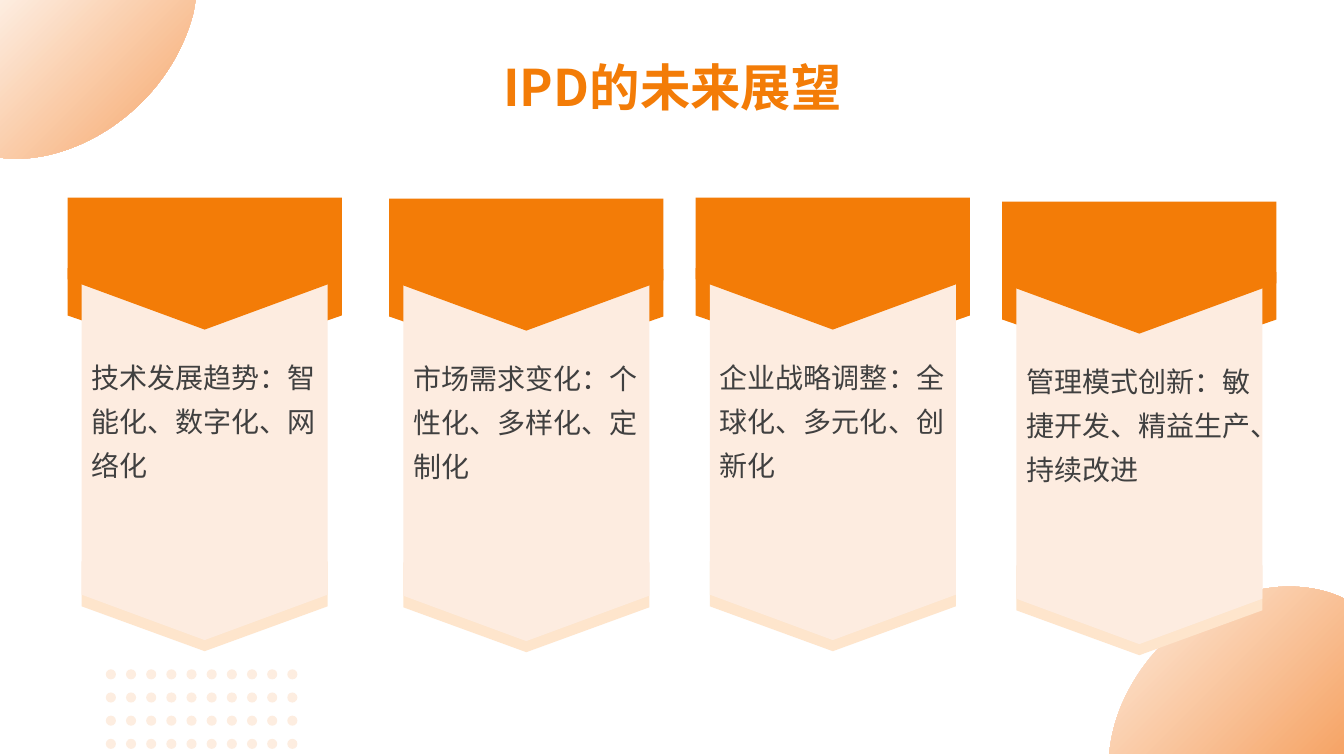
from lxml import etree
from pptx import Presentation
from pptx.dml.color import RGBColor
from pptx.enum.shapes import MSO_SHAPE
from pptx.enum.text import MSO_ANCHOR, MSO_AUTO_SIZE, PP_ALIGN
from pptx.oxml.ns import qn
from pptx.util import Inches, Pt

ELLIPSE, HOME_PLATE = MSO_SHAPE.OVAL, MSO_SHAPE.PENTAGON
MIDDLE, TOP = MSO_ANCHOR.MIDDLE, MSO_ANCHOR.TOP
CENTER, LEFT = PP_ALIGN.CENTER, PP_ALIGN.LEFT
NO_AUTOFIT = MSO_AUTO_SIZE.NONE

ORANGE = RGBColor(0xF3, 0x7C, 0x07)
LIGHT_ORANGE = RGBColor(0xF6, 0xA4, 0x66)
PEACH = RGBColor(0xFE, 0xE5, 0xCC)
CREAM = RGBColor(0xFD, 0xEC, 0xE0)
PALE = RGBColor(0xFD, 0xED, 0xE0)
GREY = RGBColor(0x40, 0x40, 0x40)

TITLE = "IPD的未来展望"
TITLE_STYLE = {
    "font": {"size": Pt(36), "bold": True},
    "paragraph": {"alignment": CENTER},
    "frame": {"vertical_anchor": MIDDLE},
}
BODY_STYLE = {
    "font": {"size": Pt(20), "bold": False},
    "paragraph": {"alignment": LEFT, "line_spacing": 1.3},
    "frame": {"vertical_anchor": TOP},
}

BANNERS = [
    (0.67, 1.96, "技术发展趋势：智能化、数字化、网络化"),
    (3.86, 1.97, "市场需求变化：个性化、多样化、定制化"),
    (6.90, 1.96, "企业战略调整：全球化、多元化、创新化"),
    (9.94, 2.00, "管理模式创新：敏捷开发、精益生产、持续改进"),
]
BANNER_WIDTH, PANEL_WIDTH = 2.72, 2.44
PANEL_INSET = (BANNER_WIDTH - PANEL_WIDTH) / 2

TOP_LEFT_CORNER = [
    [(0, 0)],
    [(1.94, 0)],
    [(1.92, 0.12), (1.84, 0.44), (1.66, 0.77), (1.38, 1.04)],
    [(1.38, 1.04), (0.98, 1.42), (0.48, 1.61), (0.04, 1.57)],
    [(0, 1.56)],
]
BOTTOM_RIGHT_CORNER = [
    [(12.78, 5.82), (12.96, 5.82), (13.13, 5.85), (13.29, 5.92)],
    [(13.33, 5.94)],
    [(13.33, 7.48)],
    [(11, 7.48)],
    [(11.01, 7.41), (11.06, 7.04), (11.25, 6.66), (11.57, 6.35)],
    [(11.57, 6.35), (11.93, 6.01), (12.38, 5.82), (12.78, 5.82)],
]


def apply(target, values):
    """Set every attribute named in a dict of format values."""
    for name, value in values.items():
        setattr(target, name, value)


def curve_points(controls, steps=24):
    """Return a single point as it is, or sample a cubic curve."""
    if len(controls) == 1:
        return controls
    weights = (1, 3, 3, 1)
    return [
        tuple(
            sum(
                weight * (1 - step / steps) ** (3 - power) * (step / steps) ** power * point[axis]
                for power, (weight, point) in enumerate(zip(weights, controls))
            )
            for axis in (0, 1)
        )
        for step in range(steps + 1)
    ]


class SlideBuilder:
    """Draw on one slide whose grid is 13.33 columns by 7.5 rows."""

    cell = Inches(1)
    font_name = "Noto Sans CJK SC"

    def __init__(self, presentation):
        """Size the presentation and add a title-only slide."""
        presentation.slide_width = self.length(13.33)
        presentation.slide_height = self.length(7.5)
        self.slide = presentation.slides.add_slide(presentation.slide_layouts[5])

    def length(self, cells):
        """Convert grid cells to a length."""
        return round(cells * self.cell)

    def box(self, column, row, width, height):
        """Convert a grid box to lengths."""
        return [self.length(cells) for cells in (column, row, width, height)]

    def paint(self, shape, color):
        """Give a shape a flat fill with no line or shadow."""
        shape.shadow.inherit = False
        shape.line.fill.background()
        shape.fill.solid()
        shape.fill.fore_color.rgb = color

    def dot(self, column, row, size, color):
        """Add a round dot."""
        self.paint(self.slide.shapes.add_shape(ELLIPSE, *self.box(column, row, size, size)), color)

    def plate(self, column, row, width, height, color):
        """Add a home plate that points down inside a grid box."""
        shift = (width - height) / 2
        box = self.box(column + shift, row - shift, height, width)
        shape = self.slide.shapes.add_shape(HOME_PLATE, *box)
        shape.rotation = 90
        self.paint(shape, color)

    def outline(self, points, color):
        """Add a closed freeform through grid points."""
        start, *others = [tuple(self.length(value) for value in point) for point in points]
        builder = self.slide.shapes.build_freeform(*start)
        builder.add_line_segments(others, close=True)
        shape = builder.convert_to_shape()
        self.paint(shape, color)
        return shape

    def pennant(self, column, row, width, shoulder, height, color):
        """Add a band with a pointed lower edge."""
        right, side = column + width, row + shoulder
        tip = (column + width / 2, row + height)
        self.outline([(column, row), (right, row), (right, side), tip, (column, side)], color)

    def corner(self, segments):
        """Add a curved corner with a diagonal gradient."""
        shape = self.outline([point for segment in segments for point in curve_points(segment)], PALE)
        shape.fill.gradient()
        shape.fill.gradient_angle = 315
        for stop, position, color in zip(shape.fill.gradient_stops, (0, 1), (PALE, LIGHT_ORANGE)):
            stop.position = position
            stop.color.rgb = color

    def fill_text(self, shape, text, style, color):
        """Fill a shape with one styled paragraph."""
        frame = shape.text_frame
        apply(frame, {"word_wrap": True, "auto_size": NO_AUTOFIT, **style["frame"]})
        paragraph = frame.paragraphs[0]
        apply(paragraph, style["paragraph"])
        run = paragraph.add_run()
        run.text = text
        apply(run.font, {"name": self.font_name, **style["font"]})
        run.font.color.rgb = color
        properties = run._r.get_or_add_rPr()
        etree.SubElement(properties, qn("a:ea")).set("typeface", self.font_name)

    def title(self, text, box):
        """Move and fill the title placeholder."""
        shape = self.slide.shapes.title
        apply(shape, dict(zip(("left", "top", "width", "height"), self.box(*box))))
        self.fill_text(shape, text, TITLE_STYLE, ORANGE)

    def text(self, text, box):
        """Add a body text box."""
        self.fill_text(self.slide.shapes.add_textbox(*self.box(*box)), text, BODY_STYLE, GREY)

    def banner(self, column, row, text):
        """Add one hanging banner with its text."""
        panel = column + PANEL_INSET
        self.plate(column, row + 0.7, BANNER_WIDTH, 0.94, ORANGE)
        self.plate(panel, row + 3.61, PANEL_WIDTH, 0.89, PEACH)
        self.pennant(panel, row + 0.7, PANEL_WIDTH, 3.24, 3.69, CREAM)
        self.pennant(column, row, BANNER_WIDTH, 0.81, 1.31, ORANGE)
        self.text(text, (panel, row + 1.47, PANEL_WIDTH, 2.2))


def main():
    """Build and save the slide."""
    presentation = Presentation()
    builder = SlideBuilder(presentation)
    for segments in (TOP_LEFT_CORNER, BOTTOM_RIGHT_CORNER):
        builder.corner(segments)
    for column in range(10):
        for row in range(4):
            builder.dot(1.05 + column * 0.2, 6.64 + row * 0.23, 0.1, PALE)
    builder.title(TITLE, (0.67, 0.5, 12, 0.71))
    for column, row, text in BANNERS:
        builder.banner(column, row, text)
    presentation.save("out.pptx")


if __name__ == "__main__":
    main()
